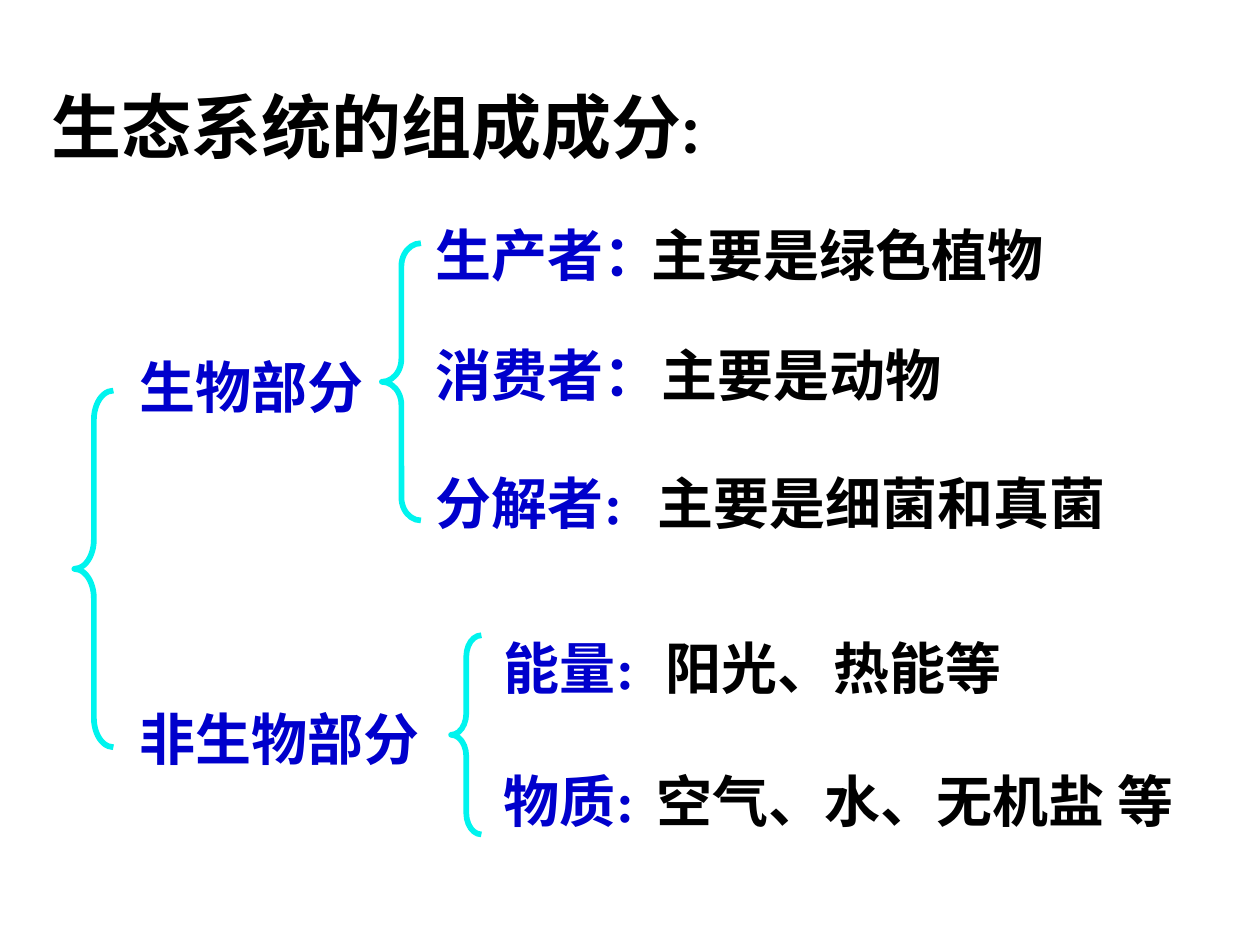
from dataclasses import dataclass

from pptx import Presentation
from pptx.dml.color import RGBColor
from pptx.enum.shapes import MSO_SHAPE
from pptx.enum.text import MSO_ANCHOR, MSO_AUTO_SIZE, PP_ALIGN
from pptx.util import Pt


@dataclass(frozen=True)
class Theme:
    label: RGBColor = RGBColor(0x00, 0x00, 0xCC)
    body: RGBColor = RGBColor(0x00, 0x00, 0x00)
    brace: RGBColor = RGBColor(0x00, 0xF4, 0xEE)
    title_size: int = 40
    text_size: int = 32
    title_font: str = "Calibri"
    text_font: str = "Times New Roman"
    alt_font: str = "Arial"


THEME = Theme()
ROW_HEIGHT = 45.5
PART_X = 72.7
BIOTIC_X, ABIOTIC_X = 241.9, 280.8

# Main parts: text, top, width
PARTS = [
    ("生物部分", 198, 222.5),
    ("非生物部分", 399, 187),
]

# Components: label, x, top, width, then detail, x, width, font
COMPONENTS = [
    ("生产者：", BIOTIC_X, 122.4, 130, "主要是绿色植物", 365, 276, THEME.text_font),
    ("消费者：", BIOTIC_X, 190.8, 135, "主要是动物", 370.8, 230, THEME.alt_font),
    ("分解者:", BIOTIC_X, 264.2, 146, "主要是细菌和真菌", 368.6, 292, THEME.alt_font),
    ("能量:", ABIOTIC_X, 358.6, 84, "阳光、热能等", 373, 225, THEME.text_font),
    ("物质:", ABIOTIC_X, 434.2, 78.5, "空气、水、无机盐 等", 368, 332, THEME.text_font),
]

# Braces: left, top, width, height, curve
BRACES = [
    (42.5, 223.2, 22.3, 203.8, 0.75),
    (218.2, 139, 22.3, 158.4, 0.59),
    (257.8, 363, 17.3, 113.8, 0.71),
]


def format_text(sp, text, size, font, color):
    tf = sp.text_frame
    tf.text = text
    tf.auto_size = MSO_AUTO_SIZE.SHAPE_TO_FIT_TEXT
    tf.vertical_anchor = MSO_ANCHOR.TOP
    p = tf.paragraphs[0]
    p.alignment = PP_ALIGN.LEFT
    p.font.size = Pt(size)
    p.font.name = font
    p.font.bold = True
    p.font.color.rgb = color
    return tf


def add_title(s, text):
    sp = s.shapes.title
    sp.left, sp.top, sp.width, sp.height = Pt(22.3), Pt(43.9), Pt(389), Pt(55.4)
    tf = format_text(sp, text, THEME.title_size, THEME.title_font, THEME.body)
    tf.word_wrap = False


def add_text(s, text, x, y, width, color, font=THEME.text_font):
    sp = s.shapes.add_textbox(Pt(x), Pt(y), Pt(width), Pt(ROW_HEIGHT))
    tf = format_text(sp, text, THEME.text_size, font, color)
    tf.word_wrap = True


def add_brace(s, x, y, width, height, curve):
    sp = s.shapes.add_shape(MSO_SHAPE.LEFT_BRACE, Pt(x), Pt(y), Pt(width), Pt(height))
    sp.shadow.inherit = False
    sp.adjustments[0] = curve
    sp.adjustments[1] = 0.5
    sp.fill.background()
    sp.line.color.rgb = THEME.brace
    sp.line.width = Pt(3.25)


def main():
    prs = Presentation()
    prs.slide_width, prs.slide_height = Pt(720), Pt(540)
    s = prs.slides.add_slide(prs.slide_layouts[5])

    add_title(s, "生态系统的组成成分:")

    # Two main parts
    for text, y, width in PARTS:
        add_text(s, text, PART_X, y, width, THEME.label)

    # Braces joining each level to the next
    for brace in BRACES:
        add_brace(s, *brace)

    # Components with their details
    for label, x, y, width, detail, detail_x, detail_width, font in COMPONENTS:
        add_text(s, label, x, y, width, THEME.label)
        add_text(s, detail, detail_x, y, detail_width, THEME.body, font)

    prs.save("out.pptx")


if __name__ == "__main__":
    main()
